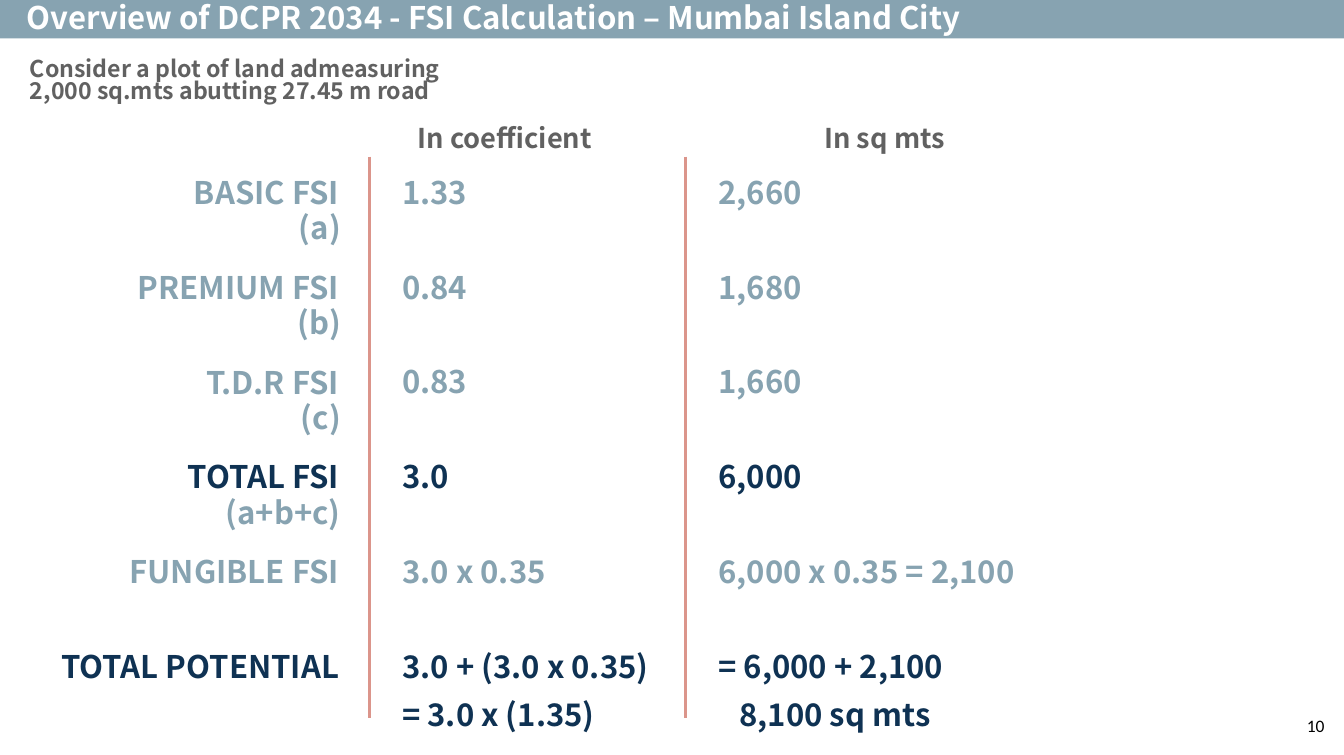
from pptx import Presentation
from pptx.dml.color import RGBColor
from pptx.enum.shapes import MSO_CONNECTOR as Connector, MSO_SHAPE as Shape
from pptx.enum.text import MSO_ANCHOR as Anchor, MSO_AUTO_SIZE as AutoSize, PP_ALIGN as Align
from pptx.oxml.ns import qn
from pptx.util import Inches, Pt
from lxml.etree import SubElement

COLORS = {"steel": "87A3B1", "navy": "0F3253", "gray": "616161",
          "coral": "DB958B", "white": "FFFFFF", "black": "000000"}
FONT = "Noto Sans CJK KR"
WIDTH, HEIGHT = 19.21, 10.79
ROW_PITCH, LINE_HEIGHT, LINE_GAP = 97.7, 35, 14.4  # points
COLUMN_TOP, COLUMN_HEIGHT = 2.47, 8.25
SUBLABEL_DROP = 0.51
RULE_TOP, RULE_BOTTOM = 2.24, 10.26

LABELS = ["BASIC FSI", "PREMIUM FSI", "T.D.R FSI", "TOTAL FSI", "FUNGIBLE FSI", "TOTAL POTENTIAL"]
SUBLABELS = ["(a)", "(b)", "(c)", "(a+b+c)"]
COEFFICIENTS = ["1.33", "0.84", "0.83", "3.0", "3.0 x 0.35", "3.0 + (3.0 x 0.35)"]
AREAS = ["2,660", "1,680", "1,660", "6,000", "6,000 x 0.35 = 2,100", "= 6,000 + 2,100"]
TOTAL_ROWS = (3, 5)


def place(shape, box):
    shape.left, shape.top, shape.width, shape.height = [Inches(value) for value in box]


def prepare_frame(shape, anchor=Anchor.TOP):
    frame = shape.text_frame
    frame.word_wrap = True
    frame.auto_size = AutoSize.NONE
    frame.vertical_anchor = anchor
    return frame


def write(para, text, size=32, color="steel", font=FONT, bold=True,
          align=Align.LEFT, spacing=0.9, before=0, indent=0):
    para.alignment = align
    para.line_spacing = spacing
    para.space_before = Pt(before)
    properties = para._p.get_or_add_pPr()
    properties.set("marL", str(Inches(indent)))
    properties.set("indent", "0")
    SubElement(properties, qn("a:buNone"))
    span = para.add_run()
    span.text = text
    span.font.size, span.font.name, span.font.bold = Pt(size), font, bold
    span.font.color.rgb = RGBColor.from_string(COLORS[color])


def add_text(page, box, text, anchor=Anchor.TOP, **style):
    shape = page.shapes.add_textbox(*[Inches(value) for value in box])
    write(prepare_frame(shape, anchor).paragraphs[0], text, **style)


def add_header(page, box):
    # Colour bar goes behind the title placeholder
    bar = page.shapes.add_shape(Shape.RECTANGLE, 0, 0, 0, 0)
    place(bar, box)
    bar.shadow.inherit = False
    bar.fill.solid()
    bar.fill.fore_color.rgb = RGBColor.from_string(COLORS["steel"])
    bar.line.fill.background()
    title = page.shapes.title
    title.element.getparent().insert(2, bar.element)
    left, top, width, height = box
    place(title, (left + 0.28, top - 0.01, 17.5, height + 0.16))
    write(prepare_frame(title).paragraphs[0],
          "Overview of DCPR 2034 - FSI Calculation – Mumbai Island City", color="white")


def fill_column(shape, box, rows, totals=(), align=Align.LEFT, last_line=None, last_indent=0):
    place(shape, box)
    frame = prepare_frame(shape)
    for index, text in enumerate(rows):
        para = frame.add_paragraph() if index else frame.paragraphs[0]
        write(para, text, color="navy" if index in totals else "steel", align=align,
              spacing=Pt(LINE_HEIGHT), before=ROW_PITCH - LINE_HEIGHT if index else 0)
    if last_line:
        write(frame.add_paragraph(), last_line, color="navy", spacing=Pt(LINE_HEIGHT),
              before=LINE_GAP, indent=last_indent)


def add_labels(page, box):
    left, top, width, height = box
    fill_column(page.placeholders[1], box, LABELS, TOTAL_ROWS, Align.RIGHT)
    sublabels = page.shapes.add_textbox(0, 0, 0, 0)
    fill_column(sublabels, (left + width - 2, top + SUBLABEL_DROP, 2.02, 5.5),
                SUBLABELS, align=Align.RIGHT)


def add_values(page, box, heading, heading_left, rows, last_line, last_indent=0):
    left, top, width, height = box
    # Rule to the left of the column
    rule_x = Inches(left - 0.37)
    rule = page.shapes.add_connector(Connector.STRAIGHT, rule_x, Inches(RULE_TOP),
                                     rule_x, Inches(RULE_BOTTOM))
    rule.line.color.rgb = RGBColor.from_string(COLORS["coral"])
    rule.line.width = Pt(3)
    SubElement(rule.element.spPr, qn("a:effectLst"))
    # Values and heading
    column = page.shapes.add_textbox(0, 0, 0, 0)
    fill_column(column, box, rows, TOTAL_ROWS, last_line=last_line, last_indent=last_indent)
    add_text(page, (heading_left, top - 0.95, 6.33, 0.95), heading, Anchor.MIDDLE,
             size=28, color="gray", align=Align.CENTER)


def main():
    deck = Presentation()
    deck.slide_width, deck.slide_height = Inches(WIDTH), Inches(HEIGHT)
    page = deck.slides.add_slide(deck.slide_layouts[1])
    add_header(page, (0, 0, WIDTH, 0.55))
    add_text(page, (0.33, 0.7, 6.33, 0.95),
             "Consider a plot of land admeasuring 2,000 sq.mts abutting 27.45 m road",
             Anchor.MIDDLE, size=23.8, color="gray", spacing=0.8)
    add_labels(page, (-0.73, COLUMN_TOP, 5.68, COLUMN_HEIGHT))
    add_values(page, (5.65, COLUMN_TOP, 5.1, COLUMN_HEIGHT), "In coefficient", 4.05,
               COEFFICIENTS, "= 3.0 x (1.35)")
    add_values(page, (10.17, COLUMN_TOP, 5.1, COLUMN_HEIGHT), "In sq mts", 9.48,
               AREAS, "8,100 sq mts", last_indent=0.3)
    # Page number
    add_text(page, (17.05, 10.17, 1.98, 0.61), "10", size=18, color="black",
             font="Calibri", bold=False, align=Align.RIGHT, spacing=1.0)
    deck.save("out.pptx")


if __name__ == "__main__":
    main()
